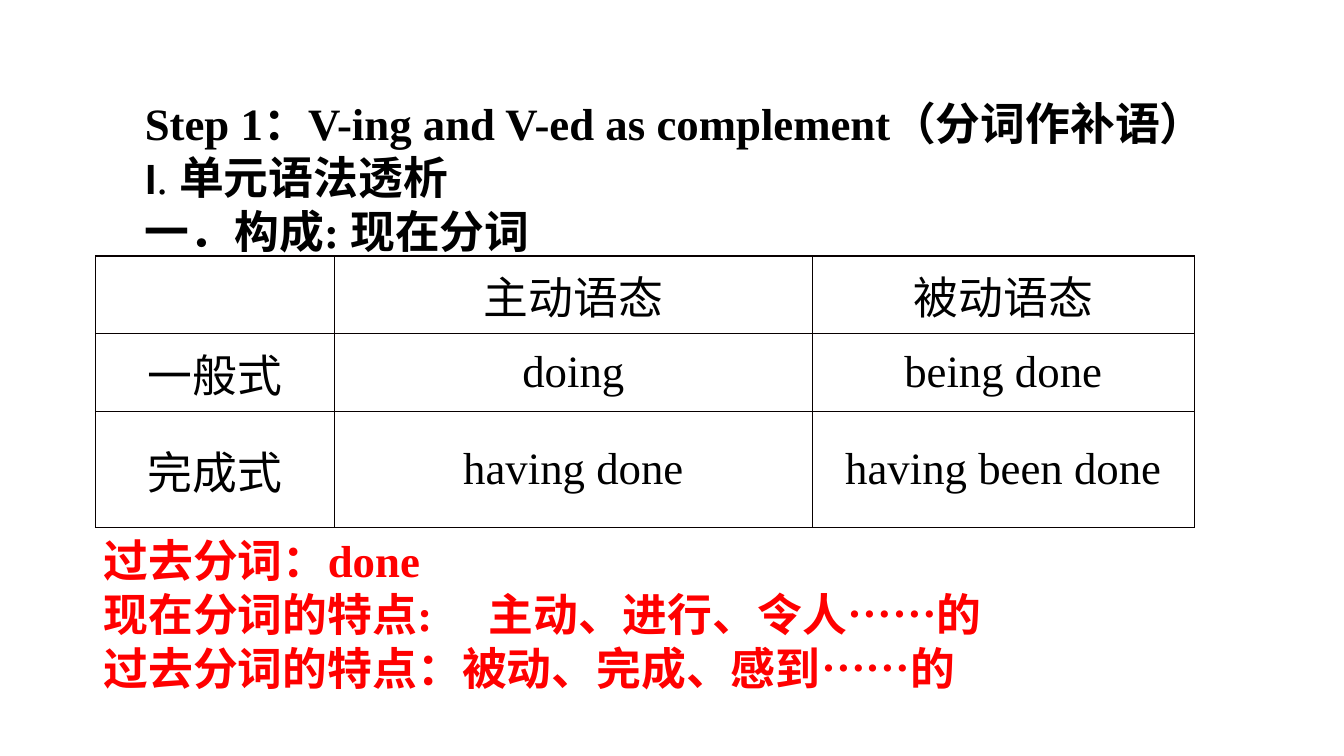
from lxml.etree import SubElement
from pptx import Presentation
from pptx.dml.color import RGBColor
from pptx.enum.text import MSO_ANCHOR, MSO_AUTO_SIZE, PP_ALIGN
from pptx.oxml.ns import qn
from pptx.util import Cm, Pt

LATIN = "Times New Roman"
CHINESE = "Calibri"
BLACK = "000000"
RED = "FF0000"
BORDER = "080000"

HEADING = [
    [("Step 1", LATIN), ("：", CHINESE), ("V-ing and V-ed as complement", LATIN),
     ("（分词作补语）", CHINESE)],
    [("I", CHINESE), (". ", LATIN), ("单元语法透析", CHINESE)],
    [("一．构成", CHINESE), (": ", LATIN), ("现在分词", CHINESE)],
]
FORMS = [
    ["", "主动语态", "被动语态"],
    ["一般式", "doing", "being done"],
    ["完成式", "having done", "having been done"],
]
FEATURES = [
    [("过去分词：", CHINESE), ("done", LATIN)],
    [("现在分词的特点", CHINESE), (":\t", LATIN), ("主动、进行、令人", CHINESE),
     ("……", LATIN), ("的", CHINESE)],
    [("过去分词的特点：被动、完成、感到", CHINESE), ("……", LATIN), ("的", CHINESE)],
]
COLUMN_WIDTHS = [6.02, 12.04, 9.63]
ROW_HEIGHTS = [1.96, 1.96, 2.92]


def color(value):
    return RGBColor.from_string(value)


def style_font(font, name, value, bold):
    font.name = name
    font.size = Pt(32)
    font.bold = bold
    font.color.rgb = color(value)


def add_tab_stop(para, position):
    tabs = SubElement(para._p.get_or_add_pPr(), qn("a:tabLst"))
    SubElement(tabs, qn("a:tab"), pos=str(position), algn="l")


def add_text(page, left, top, width, height, lines, value, tab=None):
    box = page.shapes.add_textbox(left, top, width, height)
    frame = box.text_frame
    frame.word_wrap = True
    frame.auto_size = MSO_AUTO_SIZE.SHAPE_TO_FIT_TEXT
    for index, line in enumerate(lines):
        para = frame.add_paragraph() if index else frame.paragraphs[0]
        if tab:
            add_tab_stop(para, tab)
        for text, name in line:
            span = para.add_run()
            span.text = text
            style_font(span.font, name, value, text != ". ")


def add_borders(cell):
    properties = cell._tc.get_or_add_tcPr()
    for index, side in enumerate(("lnL", "lnR", "lnT", "lnB")):
        line = properties.makeelement(qn(f"a:{side}"), {"w": str(Pt(1))})
        fill = SubElement(line, qn("a:solidFill"))
        SubElement(fill, qn("a:srgbClr"), val=BORDER)
        properties.insert(index, line)


def fill_cell(cell, text):
    cell.fill.background()
    cell.vertical_anchor = MSO_ANCHOR.MIDDLE
    cell.margin_left = cell.margin_right = Cm(0.18)
    cell.margin_top = cell.margin_bottom = Cm(0)
    add_borders(cell)
    if text:
        cell.text_frame.text = text
        para = cell.text_frame.paragraphs[0]
        para.alignment = PP_ALIGN.CENTER
        style_font(para.runs[0].font, LATIN, BLACK, False)


def add_forms_table(page, left, top):
    table = page.shapes.add_table(
        len(ROW_HEIGHTS), len(COLUMN_WIDTHS), left, top,
        Cm(sum(COLUMN_WIDTHS)), Cm(sum(ROW_HEIGHTS))).table
    table.first_row = False
    table.horz_banding = False
    for column, width in zip(table.columns, COLUMN_WIDTHS):
        column.width = Cm(width)
    for row, height, texts in zip(table.rows, ROW_HEIGHTS, FORMS):
        row.height = Cm(height)
        for cell, text in zip(row.cells, texts):
            fill_cell(cell, text)


def main():
    deck = Presentation()
    deck.slide_width = Cm(33.87)
    deck.slide_height = Cm(19.05)
    page = deck.slides.add_slide(deck.slide_layouts[6])
    add_text(page, Cm(3.4), Cm(2.29), Cm(32.51), Cm(4.37), HEADING, BLACK)
    add_forms_table(page, Cm(2.41), Cm(6.45))
    add_text(page, Cm(2.36), Cm(13.31), Cm(33.53), Cm(4.37), FEATURES, RED, Cm(9.7))
    deck.save("out.pptx")


if __name__ == "__main__":
    main()
